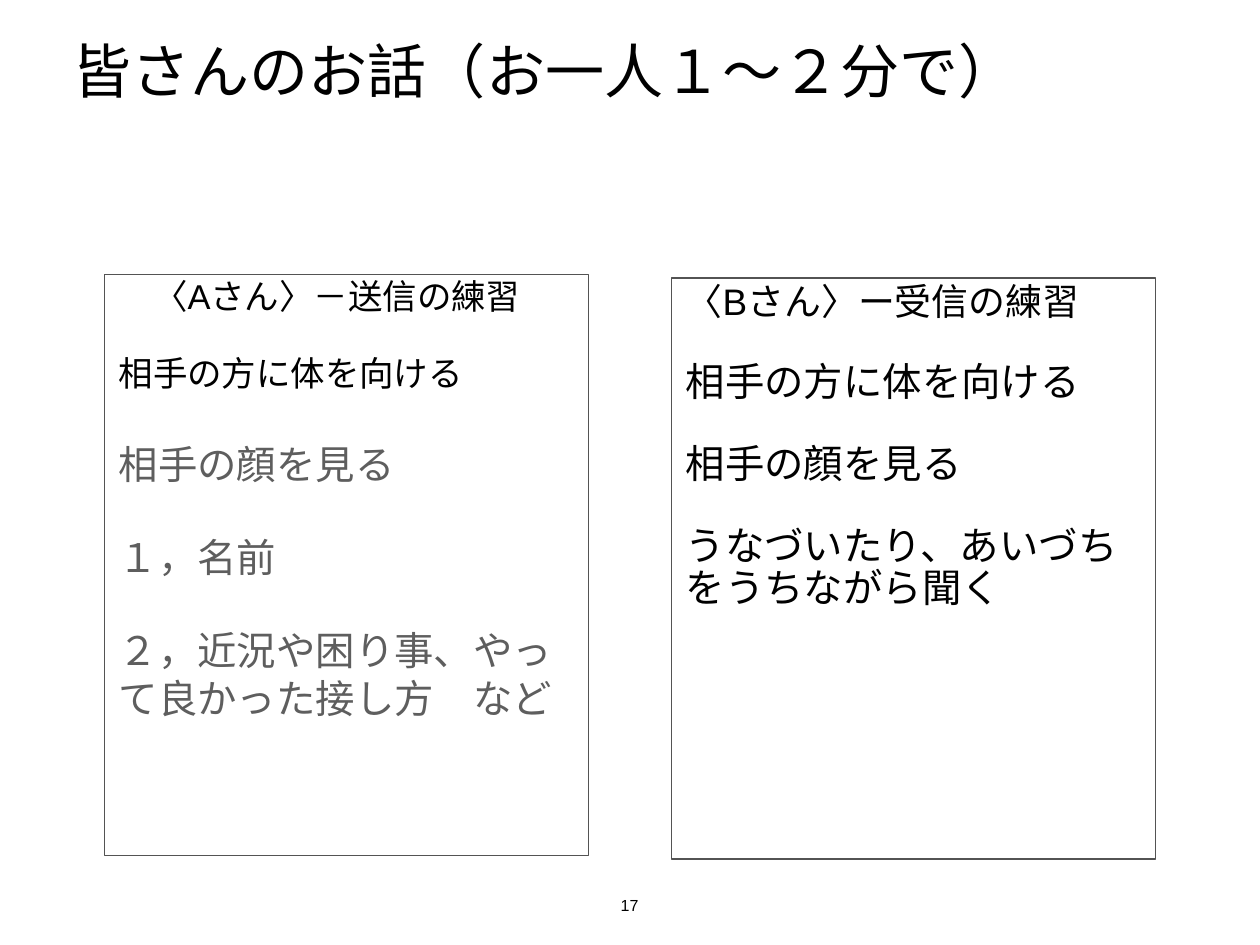
"""Build the talk practice slide with its two role boxes."""
from pptx import Presentation
from pptx.dml.color import RGBColor
from pptx.enum.shapes import MSO_SHAPE
from pptx.enum.text import MSO_ANCHOR, PP_ALIGN
from pptx.util import Inches, Pt

RECT = MSO_SHAPE.RECTANGLE
TOP, BOTTOM = MSO_ANCHOR.TOP, MSO_ANCHOR.BOTTOM
LEFT, CENTER = PP_ALIGN.LEFT, PP_ALIGN.CENTER
COLORS = {"black": "000000", "gray": "5E5E5E", "line": "535353"}


def fill_text(frame, rows, wrap=True, anchor=TOP, align=LEFT):
    """Write rows of text, size, color, spacing, space before and indent."""
    for side in ("left", "top", "right", "bottom"):
        setattr(frame, f"margin_{side}", Inches(0.06))
    frame.word_wrap = wrap
    frame.vertical_anchor = anchor
    for i, (text, size, color, line, gap, indent) in enumerate(rows):
        para = frame.add_paragraph() if i else frame.paragraphs[0]
        para._p.get_or_add_pPr().set("marL", str(Inches(indent)))
        form = {"alignment": align, "line_spacing": line, "space_before": Pt(gap)}
        for key, value in form.items():
            setattr(para, key, value)
        run = para.add_run()
        run.text = text
        run.font.name = "Arial"
        run.font.size = Pt(size)
        run.font.color.rgb = RGBColor.from_string(COLORS[color])


deck = Presentation()
deck.slide_width, deck.slide_height = Inches(14.22), Inches(10.67)
slide = deck.slides.add_slide(deck.slide_layouts[6])

sender = [
    ("〈Aさん〉－送信の練習", 28, "black", 0.9, 0, 0.49),
    ("相手の方に体を向ける", 28, "black", 0.9, 32, 0.1),
]
for text in ("相手の顔を見る", "１，名前", "２，近況や困り事、やって良かった接し方　など"):
    sender.append((text, 32, "gray", 1.0, 37.5, 0.1))

hearer = [("〈Bさん〉ー受信の練習", 30, "black", 0.9, 0, 0.1)]
for text in ("相手の方に体を向ける", "相手の顔を見る", "うなづいたり、あいづちをうちながら聞く"):
    hearer.append((text, 32, "black", 0.9, 32, 0.1))

for left, top, rows in ((1.18, 3.1, sender), (7.58, 3.14, hearer)):
    box = slide.shapes.add_shape(RECT, Inches(left), Inches(top), Inches(5.46), Inches(6.56))
    box.shadow.inherit = False
    box.fill.background()
    box.line.color.rgb = RGBColor.from_string(COLORS["line"])
    box.line.width = Pt(1)
    fill_text(box.text_frame, rows)

title = slide.shapes.add_textbox(Inches(0.76), Inches(0.48), Inches(12.69), Inches(1.06))
fill_text(title.text_frame, [("皆さんのお話（お一人１～２分で）", 48, "black", 0.8, 0, 0)])

page = slide.shapes.add_textbox(Inches(6.94), Inches(10.08), Inches(0.33), Inches(0.31))
fill_text(page.text_frame, [("17", 13, "black", 1.0, 0, 0)], False, BOTTOM, CENTER)

deck.save("out.pptx")
